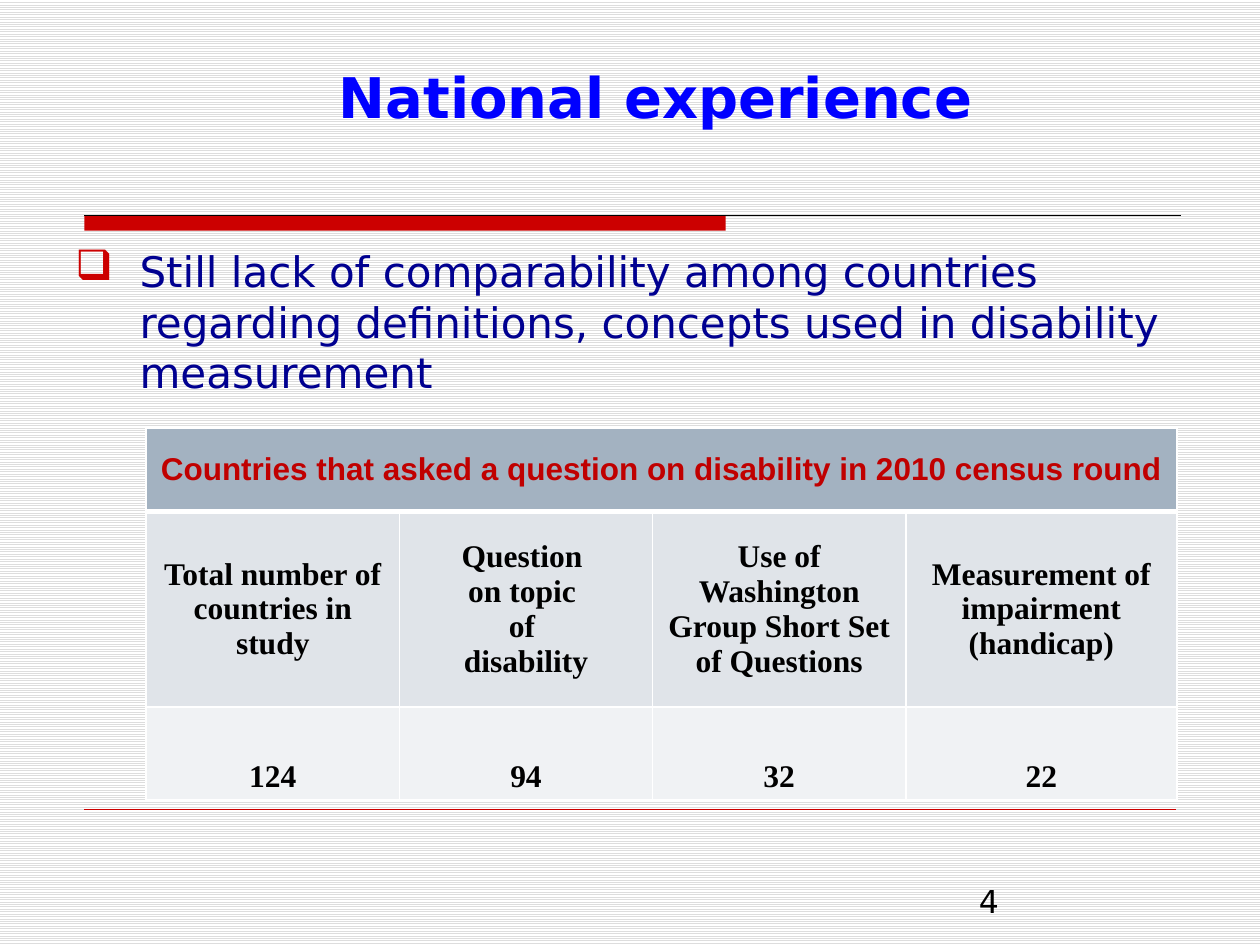
from lxml import etree
from pptx import Presentation
from pptx.dml.color import RGBColor
from pptx.enum import dml, shapes, text
from pptx.oxml import ns
from pptx.util import Inches, Pt

RED = RGBColor(0xCC, 0x00, 0x00)
DARK_RED = RGBColor(0xC0, 0x00, 0x00)
BLUE = RGBColor(0x00, 0x00, 0xFF)
NAVY = RGBColor(0x00, 0x00, 0x90)
BLACK = RGBColor(0x00, 0x00, 0x00)
WHITE = RGBColor(0xFF, 0xFF, 0xFF)
STRIPE = RGBColor(0xDD, 0xDD, 0xDD)
BANNER = RGBColor(0xA3, 0xB2, 0xC1)
HEADING = RGBColor(0xE0, 0xE4, 0xE9)
VALUES = RGBColor(0xF0, 0xF2, 0xF4)

BANNER_TEXT = "Countries that asked a question on disability in 2010 census round"
COLUMNS = [
    ("Total number of countries in study", "124"),
    ("Question \non topic \nof \ndisability", "94"),
    ("Use of Washington Group Short Set of Questions", "32"),
    ("Measurement of impairment (handicap)", "22"),
]


def add_xml(parent, tag, **attributes):
    return etree.SubElement(parent, ns.qn(tag), attributes)


class SlideWriter:
    font = "DejaVu Sans"
    table_font = "Times New Roman"

    def __init__(self, page):
        self.page = page

    def background(self, front, back):
        fill = self.page.background.fill
        fill.patterned()
        fill.pattern = dml.MSO_PATTERN.LIGHT_HORIZONTAL
        fill.fore_color.rgb = front
        fill.back_color.rgb = back

    def style(self, para, size, color, bold=False, font=None):
        para.font.name = font or self.font
        para.font.size = Pt(size)
        para.font.bold = bold
        para.font.color.rgb = color

    def bar(self, left, top, width, height, color):
        shape = self.page.shapes.add_shape(
            shapes.MSO_SHAPE.RECTANGLE,
            Inches(left), Inches(top), Inches(width), Inches(height))
        shape.shadow.inherit = False
        shape.fill.solid()
        shape.fill.fore_color.rgb = color
        shape.line.fill.background()

    def rule(self, left, right, y, color, width):
        line = self.page.shapes.add_connector(
            shapes.MSO_CONNECTOR.STRAIGHT,
            Inches(left), Inches(y), Inches(right), Inches(y))
        line.line.color.rgb = color
        line.line.width = Pt(width)
        add_xml(line._element.spPr, "a:effectLst")

    def text_box(self, left, top, width, height, words, size, color, bold=False):
        box = self.page.shapes.add_textbox(
            Inches(left), Inches(top), Inches(width), Inches(height))
        box.text_frame.word_wrap = True
        box.text_frame.text = words
        self.style(box.text_frame.paragraphs[0], size, color, bold)
        return box

    def bullet_box(self, left, top, width, height, words, size, color):
        box = self.text_box(left, top, width, height, "", size, color)
        para = box.text_frame.paragraphs[0]
        para.text = words
        properties = para._p.get_or_add_pPr()
        properties.clear()
        properties.set("marL", str(Inches(0.51)))
        properties.set("indent", str(Inches(-0.51)))
        bullet_color = add_xml(properties, "a:buClr")
        add_xml(bullet_color, "a:srgbClr", val=str(RED))
        add_xml(properties, "a:buChar", char="❑")
        self.style(para, size, color)

    def cell(self, cell, words, fill, anchor, color=BLACK, font=None, top=1, bottom=1):
        properties = cell._tc.get_or_add_tcPr()
        for side, width in (("L", 1), ("R", 1), ("T", top), ("B", bottom)):
            line = add_xml(properties, f"a:ln{side}", w=str(Pt(width)))
            add_xml(add_xml(line, "a:solidFill"), "a:srgbClr", val=str(WHITE))
        cell.fill.solid()
        cell.fill.fore_color.rgb = fill
        cell.vertical_anchor = anchor
        cell.text_frame.text = words
        for para in cell.text_frame.paragraphs:
            para.alignment = text.PP_ALIGN.CENTER
            self.style(para, 18, color, True, font or self.table_font)

    def table(self, left, top, widths, heights):
        table = self.page.shapes.add_table(
            len(heights), len(widths), Inches(left), Inches(top),
            Inches(sum(widths)), Inches(sum(heights))).table
        for column, width in zip(table.columns, widths):
            column.width = Inches(width)
        for row, height in zip(table.rows, heights):
            row.height = Inches(height)
        return table


def main():
    deck = Presentation()
    deck.slide_width, deck.slide_height = Inches(10), Inches(7.5)
    writer = SlideWriter(deck.slides.add_slide(deck.slide_layouts[6]))

    writer.background(STRIPE, WHITE)
    writer.bar(0.67, 1.71, 5.09, 0.12, RED)
    writer.rule(0.67, 9.37, 1.71, BLACK, 0.75)
    writer.rule(0.67, 9.33, 6.42, RED, 0.25)

    title = writer.text_box(2.59, 0.73, 7.08, 0.87, "National experience", 32, BLUE, True)
    title.text_frame.vertical_anchor = text.MSO_ANCHOR.BOTTOM
    title.text_frame.margin_bottom = Inches(0.57)

    writer.bullet_box(
        0.5, 1.9, 9, 5.25,
        "Still lack of comparability among countries regarding definitions, "
        "concepts used in disability measurement", 24, NAVY)
    writer.text_box(7.67, 6.95, 2.33, 0.4, "4", 18, BLACK)

    table = writer.table(1.16, 3.4, [2.01, 2.01, 2.01, 2.15], [0.66, 1.55, 0.74])
    middle, low = text.MSO_ANCHOR.MIDDLE, text.MSO_ANCHOR.BOTTOM
    table.cell(0, 0).merge(table.cell(0, len(COLUMNS) - 1))
    for index, (heading, value) in enumerate(COLUMNS):
        banner = "" if index else BANNER_TEXT
        writer.cell(table.cell(0, index), banner, BANNER, middle, DARK_RED, "Arial", bottom=3)
        writer.cell(table.cell(1, index), heading, HEADING, middle, top=3)
        writer.cell(table.cell(2, index), value, VALUES, low)

    deck.save("out.pptx")


if __name__ == "__main__":
    main()
